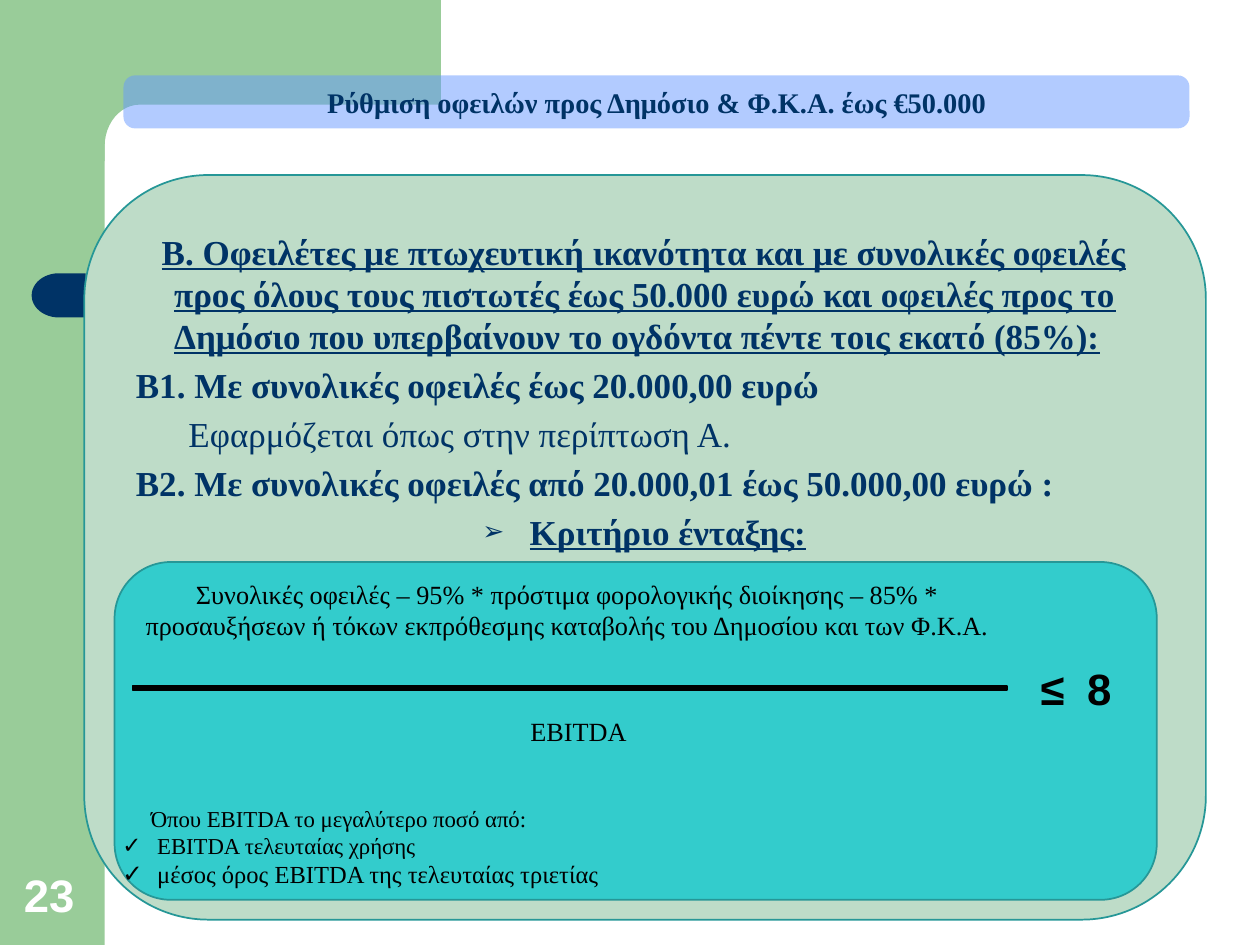
from math import cos, pi, sin

from lxml.etree import SubElement
from pptx import Presentation
from pptx.dml.color import RGBColor
from pptx.enum.shapes import MSO_SHAPE
from pptx.enum.text import MSO_ANCHOR, PP_ALIGN
from pptx.oxml.ns import qn
from pptx.util import Cm, Pt

GREEN, NAVY, TEAL, BLACK = "99CC99", "003366", "269797", "000000"
SERIF, SANS = "Times New Roman", "Arial"


def paint(shape, fill, line=None):
    shape.shadow.inherit = False
    shape.fill.solid()
    shape.fill.fore_color.rgb = RGBColor.from_string(fill)
    if line:
        shape.line.color.rgb = RGBColor.from_string(line)
        shape.line.width = Pt(1)
    else:
        shape.line.fill.background()


def write(shape, lines, color, font=SERIF, align=PP_ALIGN.LEFT, anchor=MSO_ANCHOR.TOP):
    """Each line is (text, size, bold, underline, left margin cm, indent cm, bullet)."""
    frame = shape.text_frame
    frame.word_wrap = True
    frame.vertical_anchor = anchor
    frame.text = "\n".join(line[0] for line in lines)
    for paragraph, line in zip(frame.paragraphs, lines):
        text, size, bold, underline, margin, indent, bullet = line
        paragraph.alignment = align
        properties = paragraph._p.get_or_add_pPr()
        properties.set("marL", str(Cm(margin)))
        properties.set("indent", str(Cm(indent)))
        if bullet:
            SubElement(properties, qn("a:buFont"), typeface=SANS)
            SubElement(properties, qn("a:buChar"), char=bullet)
        for run in paragraph.runs:
            run.font.name = font
            run.font.size = Pt(size)
            run.font.bold = bold
            run.font.underline = underline
            run.font.color.rgb = RGBColor.from_string(color)


presentation = Presentation()
presentation.slide_width, presentation.slide_height = Cm(25.4), Cm(19.05)
slide = presentation.slides.add_slide(presentation.slide_layouts[6])
shapes = slide.shapes

# Green side band and top corner with a rounded inner edge
band = shapes.add_shape(MSO_SHAPE.RECTANGLE, 0, 0, Cm(2.11), Cm(19.05))
paint(band, GREEN)
angles = [pi / 2 * step / 12 for step in range(13)]
arc = [(2.82 - 0.71 * sin(angle), 2.95 - 0.84 * cos(angle)) for angle in angles]
outline = [(8.89, 2.11)] + arc + [(2.11, 3.25), (1.27, 3.25), (1.27, 0)]
builder = shapes.build_freeform(Cm(8.89), 0)
builder.add_line_segments([(Cm(x), Cm(y)) for x, y in outline], close=True)
paint(builder.convert_to_shape(), GREEN)

tab = shapes.add_shape(MSO_SHAPE.FLOWCHART_DELAY, Cm(0.64), Cm(5.51), Cm(1.09), Cm(0.89))
paint(tab, NAVY)
tab._element.spPr.find(qn("a:xfrm")).set("flipH", "1")

# Main panel and its text
panel = shapes.add_shape(MSO_SHAPE.ROUNDED_RECTANGLE, Cm(1.7), Cm(3.53), Cm(22.61), Cm(15.01))
paint(panel, "BEDCC8", TEAL)
body = shapes.add_textbox(Cm(2.31), Cm(4.52), Cm(21.36), Cm(13.79))
write(body, [
    ("Β. Οφειλέτες με πτωχευτική ικανότητα και με συνολικές οφειλές προς όλους τους "
     "πιστωτές έως 50.000 ευρώ και οφειλές προς το Δημόσιο που υπερβαίνουν το ογδόντα "
     "πέντε τοις εκατό (85%):", 20, True, True, 0.95, -0.25, None),
    ("Β1. Με συνολικές οφειλές έως 20.000,00 ευρώ", 20, True, False, 0.95, -0.77, None),
    ("Εφαρμόζεται όπως στην περίπτωση Α.", 20, False, False, 1.24, 0, None),
    ("Β2. Με συνολικές οφειλές από 20.000,01 έως 50.000,00 ευρώ :",
     20, True, False, 0.95, -0.77, None),
    ("Κριτήριο ένταξης:", 20, True, True, 0.95, -0.95, "➢"),
], NAVY)
for paragraph in body.text_frame.paragraphs:
    paragraph.line_spacing = Pt(24)
    paragraph.space_before = Pt(4)
body.text_frame.paragraphs[0].space_before = Pt(1)
criterion = body.text_frame.paragraphs[-1]
criterion.alignment = PP_ALIGN.CENTER
bullet_font = criterion._p.pPr.find(qn("a:buFont"))
bullet_size = SubElement(criterion._p.pPr, qn("a:buSzPct"), val="75000")
bullet_font.addprevious(bullet_size)
bullet_color = SubElement(criterion._p.pPr, qn("a:buClr"))
SubElement(bullet_color, qn("a:srgbClr"), val=NAVY)
bullet_size.addprevious(bullet_color)

number = shapes.add_textbox(Cm(0.23), Cm(17.35), Cm(1.63), Cm(1.35))
write(number, [("23", 26, True, False, 0, 0, None)], "FFFFFF", SANS, anchor=MSO_ANCHOR.BOTTOM)

# Title bar
title = shapes.add_shape(MSO_SHAPE.ROUNDED_RECTANGLE, Cm(2.49), Cm(1.52), Cm(21.49), Cm(1.07))
title.adjustments[0] = 0.22
paint(title, "6699FF")
fill_color = title._element.spPr.find(qn("a:solidFill")).find(qn("a:srgbClr"))
SubElement(fill_color, qn("a:alpha"), val="50000")
write(title, [("Ρύθμιση οφειλών προς Δημόσιο & Φ.Κ.Α. έως €50.000", 16.2, True, False, 0, 0, None)],
      NAVY, align=PP_ALIGN.CENTER, anchor=MSO_ANCHOR.MIDDLE)

# Formula: numerator, fraction bar, denominator and limit
formula = shapes.add_shape(MSO_SHAPE.FLOWCHART_ALTERNATE_PROCESS,
                           Cm(2.31), Cm(11.33), Cm(21.01), Cm(6.81))
paint(formula, "33CCCC", TEAL)
write(formula, [("EBITDA", 15, False, False, 7.8, 0, None)], BLACK, anchor=MSO_ANCHOR.MIDDLE)

numerator = shapes.add_textbox(Cm(1.3), Cm(11.53), Cm(19), Cm(1.55))
write(numerator, [
    ("Συνολικές οφειλές – 95% * πρόστιμα φορολογικής διοίκησης – 85% * προσαυξήσεων ή "
     "τόκων εκπρόθεσμης καταβολής του Δημοσίου και των Φ.Κ.Α.", 15, False, False, 1.27, 0, None),
], BLACK, align=PP_ALIGN.CENTER)

fraction_bar = shapes.add_shape(MSO_SHAPE.MATH_MINUS, Cm(-0.51), Cm(13.72), Cm(24), Cm(0.3))
paint(fraction_bar, BLACK, BLACK)

limit = shapes.add_textbox(Cm(19.89), Cm(13.21), Cm(3.61), Cm(1.32))
write(limit, [("≤ 8", 25, True, False, 0, 0, None)], BLACK, SANS, PP_ALIGN.CENTER)
limit.text_frame.paragraphs[0].runs[0].font._element.set("spc", "300")

notes = shapes.add_textbox(Cm(0.25), Cm(16.1), Cm(21.01), Cm(1.96))
write(notes, [
    ("Όπου EBITDA το μεγαλύτερο ποσό από:", 13, False, False, 2.54, 0, None),
    ("EBITDA τελευταίας χρήσης", 13, False, False, 2.67, -0.7, "✓"),
    ("μέσος όρος EBITDA της τελευταίας τριετίας", 14, False, False, 2.67, -0.7, "✓"),
], BLACK)

presentation.save("out.pptx")
